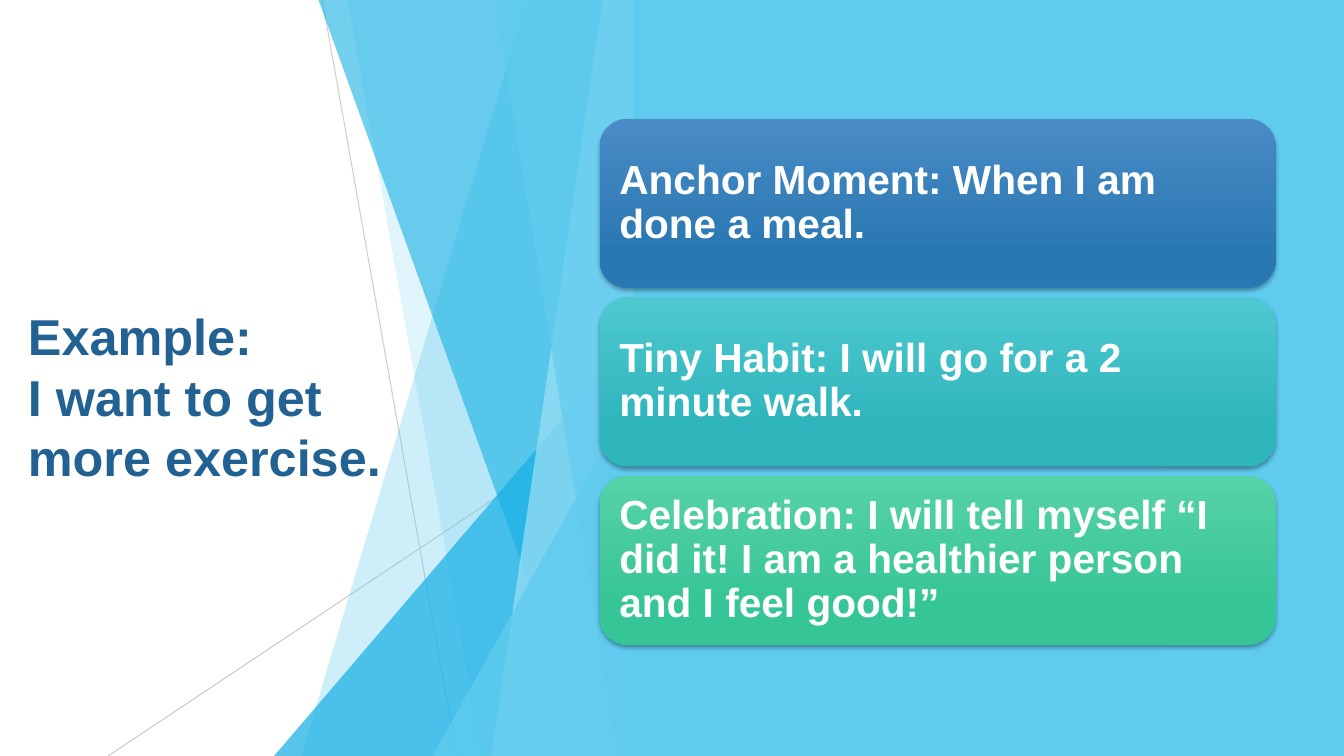
"""Build the tiny-habit example slide: a title, faceted artwork and three habit cards."""
from dataclasses import dataclass

from lxml import etree
from pptx import Presentation
from pptx import util as u
from pptx.dml.color import RGBColor
from pptx.enum import shapes, text
from pptx.oxml.ns import qn
from pptx.shapes.base import BaseShape
from pptx.slide import Slide
from pptx.text.text import TextFrame

SLIDE_WIDTH, SLIDE_HEIGHT = 1280, 720
PANEL_LEFT = 603
CARD_LEFT, CARD_TOP, CARD_WIDTH, CARD_HEIGHT = 571, 113, 644, 161
CARD_PITCH = 170


@dataclass
class Ray:
    start: tuple[int, int]
    end: tuple[int, int]
    opacity: int


@dataclass
class Facet:
    top_x: int
    bottom_x: int
    color: str
    opacity: int


@dataclass
class Wedge:
    left: int
    top: int
    color: str
    opacity: int


@dataclass
class Card:
    label: str
    top_color: str
    bottom_color: str


RAYS = [Ray((307, 0), (435, 720), 75), Ray((603, 387), (103, 720), 80)]
ARTWORK = [
    Facet(502, 287, "5FCBEF", 30),
    Facet(331, 459, "5FCBEF", 20),
    Wedge(261, 320, "17B0E4", 72),
    Facet(303, 563, "17B0E4", 60),
    Facet(574, 468, "9FE0F5", 70),
    Facet(471, 588, "5FCBEF", 65),
    Wedge(412, 377, "5FCBEF", 80),
]
CARDS = [
    Card("Anchor Moment: When I am done a meal.", "4A8BC6", "2A78B2"),
    Card("Tiny Habit: I will go for a 2 minute walk.", "4DC8D0", "2FB5BC"),
    Card("Celebration: I will tell myself “I did it! I am a healthier person and I feel good!”",
         "56D2A7", "36C596"),
]


def px(length: int) -> u.Emu:
    return u.Emu(length * 9525)


def rgb(color: str) -> RGBColor:
    return RGBColor.from_string(color)


def set_opacity(shape: BaseShape, percent: int) -> None:
    for color in shape._element.spPr.iter(qn("a:srgbClr")):
        etree.SubElement(color, qn("a:alpha"), val=str(percent * 1000))


def paint(shape: BaseShape, color: str, opacity: int = 100) -> None:
    shape.shadow.inherit = False
    shape.fill.solid()
    shape.fill.fore_color.rgb = rgb(color)
    shape.line.fill.background()
    if opacity < 100:
        set_opacity(shape, opacity)


def draw_ray(slide: Slide, ray: Ray) -> None:
    line = slide.shapes.add_connector(
        shapes.MSO_CONNECTOR.STRAIGHT, *map(px, ray.start + ray.end))
    line.line.color.rgb = rgb("BFBFBF")
    line.line.width = u.Pt(0.75)
    set_opacity(line, ray.opacity)
    etree.SubElement(line._element.spPr, qn("a:effectLst"))


def draw_facet(slide: Slide, facet: Facet) -> None:
    builder = slide.shapes.build_freeform(facet.top_x, -1, scale=9525)
    builder.add_line_segments(
        [(PANEL_LEFT, -1), (PANEL_LEFT, SLIDE_HEIGHT), (facet.bottom_x, SLIDE_HEIGHT)])
    paint(builder.convert_to_shape(), facet.color, facet.opacity)


def draw_wedge(slide: Slide, wedge: Wedge) -> None:
    shape = slide.shapes.add_shape(
        shapes.MSO_SHAPE.ISOSCELES_TRIANGLE, px(wedge.left), px(wedge.top),
        px(PANEL_LEFT - wedge.left), px(SLIDE_HEIGHT - wedge.top))
    shape.adjustments[0] = 1
    paint(shape, wedge.color, wedge.opacity)


def write(frame: TextFrame, words: str, size: int, color: str) -> None:
    frame.word_wrap = True
    frame.auto_size = text.MSO_AUTO_SIZE.NONE
    frame.vertical_anchor = text.MSO_ANCHOR.MIDDLE
    paragraph = frame.paragraphs[0]
    paragraph.text = words
    paragraph.alignment = text.PP_ALIGN.LEFT
    font = paragraph.font
    font.name, font.size, font.bold = "Arial", u.Pt(size), True
    font.color.rgb = rgb(color)


def place_title(slide: Slide) -> None:
    title = slide.shapes.title
    title.left, title.top, title.width, title.height = map(px, (17, 276, 372, 202))
    write(title.text_frame, "Example: \vI want to get more exercise.", 36, "226292")
    slide.shapes._spTree.append(title._element)


def draw_panel(slide: Slide) -> None:
    panel = slide.shapes.add_shape(
        shapes.MSO_SHAPE.RECTANGLE, px(PANEL_LEFT), 0,
        px(SLIDE_WIDTH - PANEL_LEFT), px(SLIDE_HEIGHT))
    paint(panel, "5FCBEF")


def add_shadow(shape: BaseShape) -> None:
    shape.shadow.inherit = False
    effects = shape._element.spPr.find(qn("a:effectLst"))
    shadow = etree.SubElement(effects, qn("a:outerShdw"), blurRad=str(u.Pt(3)),
                              dist=str(u.Pt(2)), dir="5400000", rotWithShape="0")
    color = etree.SubElement(shadow, qn("a:srgbClr"), val="000000")
    etree.SubElement(color, qn("a:alpha"), val="35000")


def draw_card(slide: Slide, card: Card, top: int) -> None:
    shape = slide.shapes.add_shape(
        shapes.MSO_SHAPE.ROUNDED_RECTANGLE, px(CARD_LEFT), px(top),
        px(CARD_WIDTH), px(CARD_HEIGHT))
    shape.fill.gradient()
    shape.fill.gradient_angle = 270
    stops = zip(shape.fill.gradient_stops, (card.top_color, card.bottom_color), (0, 0.78))
    for stop, color, position in stops:
        stop.color.rgb = rgb(color)
        stop.position = position
    shape.line.fill.background()
    add_shadow(shape)
    frame = shape.text_frame
    frame.margin_left = frame.margin_right = px(11)
    frame.margin_top = frame.margin_bottom = px(11)
    write(frame, card.label, 29, "FFFFFF")
    frame.paragraphs[0].line_spacing = 0.9


def main() -> None:
    presentation = Presentation()
    presentation.slide_width, presentation.slide_height = px(SLIDE_WIDTH), px(SLIDE_HEIGHT)
    slide = presentation.slides.add_slide(presentation.slide_layouts.get_by_name("Title Only"))
    for ray in RAYS:
        draw_ray(slide, ray)
    for piece in ARTWORK:
        if isinstance(piece, Facet):
            draw_facet(slide, piece)
        else:
            draw_wedge(slide, piece)
    place_title(slide)
    draw_panel(slide)
    for row, card in enumerate(CARDS):
        draw_card(slide, card, CARD_TOP + row * CARD_PITCH)
    presentation.save("out.pptx")


if __name__ == "__main__":
    main()
